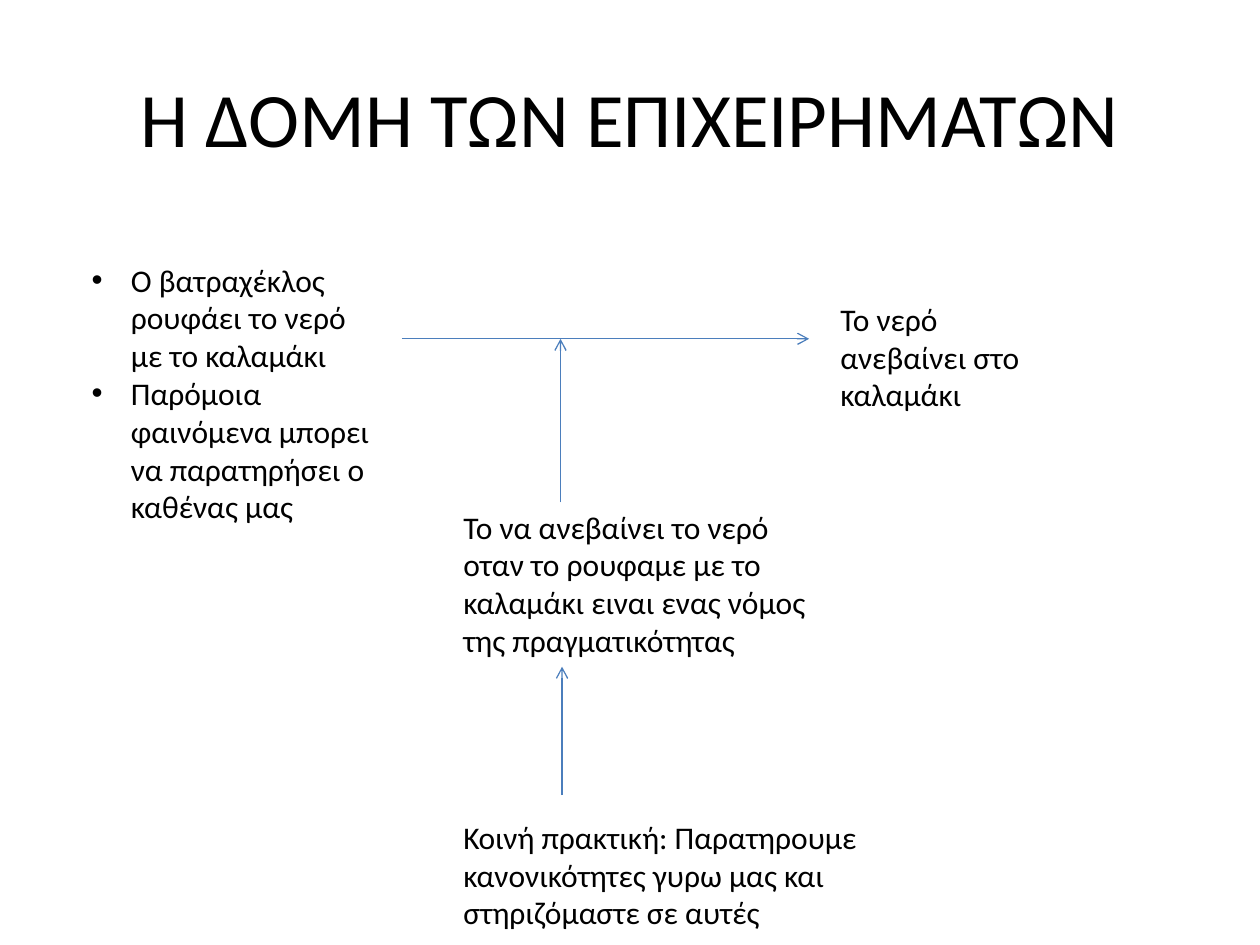
from lxml import etree
from pptx import Presentation
from pptx import util as u
from pptx.dml.color import RGBColor
from pptx.enum import shapes, text
from pptx.oxml import ns

BLACK = RGBColor(0x00, 0x00, 0x00)
BLUE = RGBColor(0x4B, 0x7E, 0xBC)
FONT = "Calibri"
BULLET_INDENT = u.Cm(0.79)


def add_bullet(paragraph):
    props = paragraph._p.get_or_add_pPr()
    props.set("marL", str(BULLET_INDENT))
    props.set("indent", str(-BULLET_INDENT))
    etree.SubElement(props, ns.qn("a:buFont")).set("typeface", "Arial")
    etree.SubElement(props, ns.qn("a:buChar")).set("char", "•")


def add_statement(slide, box, lines, size=18, bulleted=False):
    """Write one paragraph per line in box (left, top, width, height in cm)."""
    statement = slide.shapes.add_textbox(*(u.Cm(v) for v in box))
    frame = statement.text_frame
    frame.word_wrap = True
    for i, line in enumerate(lines):
        paragraph = frame.paragraphs[0] if i == 0 else frame.add_paragraph()
        if bulleted:
            add_bullet(paragraph)
        run = paragraph.add_run()
        run.text = line
        run.font.name = FONT
        run.font.size = u.Pt(size)
        run.font.color.rgb = BLACK
    return frame


def add_arrow(slide, x1, y1, x2, y2):
    arrow = slide.shapes.add_connector(
        shapes.MSO_CONNECTOR.STRAIGHT, *(u.Cm(v) for v in (x1, y1, x2, y2)))
    arrow.line.color.rgb = BLUE
    arrow.line.width = u.Pt(0.75)
    etree.SubElement(arrow.line._get_or_add_ln(), ns.qn("a:tailEnd")).set("type", "arrow")
    etree.SubElement(arrow._element.spPr, ns.qn("a:effectLst"))


def build_title(slide, box):
    frame = add_statement(slide, box, ["Η ΔΟΜΗ ΤΩΝ ΕΠΙΧΕΙΡΗΜΑΤΩΝ"], size=44)
    frame.vertical_anchor = text.MSO_ANCHOR.MIDDLE
    frame.paragraphs[0].alignment = text.PP_ALIGN.CENTER


def build_argument(slide, left, top):
    """Data lead to a claim, held up by a warrant and its backing."""
    warrant_left = left + 7.49
    claim_line = top + 1.7

    # Data
    add_statement(slide, (left, top, 6.2, 5.64),
                  ["Ο βατραχέκλος ρουφάει το νερό με το καλαμάκι",
                   "Παρόμοια φαινόμενα μπορει να παρατηρήσει ο καθένας μας"],
                  bulleted=True)
    # Claim
    add_statement(slide, (left + 15.09, top + 0.79, 5, 2.57),
                  ["Το νερό ανεβαίνει στο καλαμάκι"])
    # Warrant
    add_statement(slide, (warrant_left, top + 4.98, 7.59, 3.33),
                  ["Το να ανεβαίνει το νερό οταν το ρουφαμε με το καλαμάκι "
                   "ειναι ενας νόμος της πραγματικότητας"])
    # Backing
    add_statement(slide, (warrant_left, top + 11.23, 10.11, 2.57),
                  ["Κοινή πρακτική: Παρατηρουμε κανονικότητες γυρω μας και "
                   "στηριζόμαστε σε αυτές"])

    # Data to claim, warrant to that step, backing to warrant
    add_arrow(slide, left + 6.5, claim_line, left + 14.71, claim_line)
    add_arrow(slide, left + 9.7, top + 5, left + 9.7, claim_line)
    add_arrow(slide, left + 9.73, top + 10.9, left + 9.73, top + 8.31)


def main():
    deck = Presentation()
    deck.slide_width, deck.slide_height = u.Cm(25.4), u.Cm(19.05)
    slide = deck.slides.add_slide(deck.slide_layouts[6])
    build_title(slide, (1.27, 0.76, 22.86, 3.18))
    build_argument(slide, 1.6, 5.13)
    deck.save("out.pptx")


if __name__ == "__main__":
    main()
